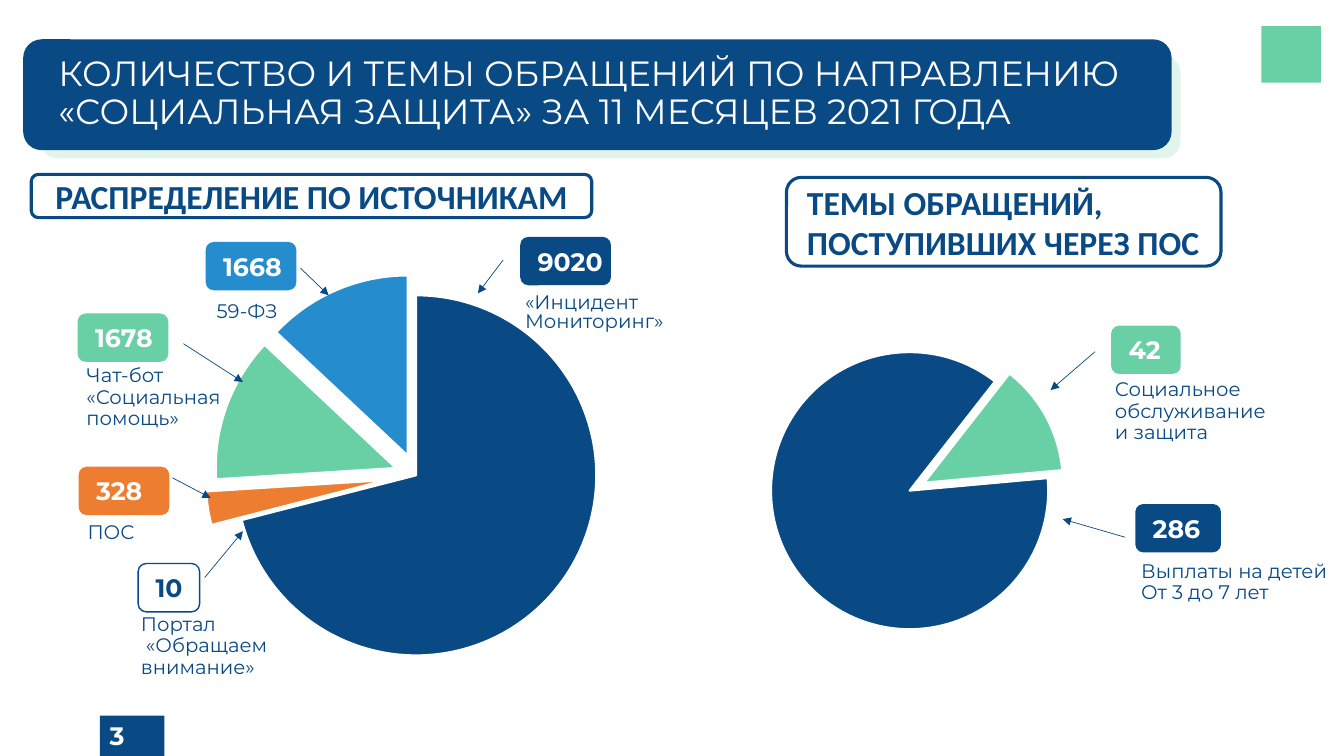
from lxml import etree
from pptx import Presentation
from pptx import util as u
from pptx.chart.data import CategoryChartData
from pptx.dml.color import RGBColor
from pptx.enum import chart as ch, shapes as sh, text as tx
from pptx.oxml import parse_xml
from pptx.oxml.ns import nsdecls, qn

NAVY = RGBColor(0x0A, 0x4A, 0x84)
BLUE = RGBColor(0x25, 0x8D, 0xCD)
GREEN = RGBColor(0x69, 0xD0, 0xA5)
ORANGE = RGBColor(0xED, 0x7D, 0x31)
GREY = RGBColor(0xA5, 0xA5, 0xA5)
WHITE = RGBColor(0xFF, 0xFF, 0xFF)
BLACK = RGBColor(0, 0, 0)

WIDTH, HEIGHT = 13.33, 7.5
BADGE_HEIGHT = 0.48
TITLE = ["КОЛИЧЕСТВО И ТЕМЫ ОБРАЩЕНИЙ ПО НАПРАВЛЕНИЮ",
         "«СОЦИАЛЬНАЯ ЗАЩИТА» ЗА 11 МЕСЯЦЕВ 2021 ГОДА"]
PAGE = "3"
HEADINGS = [
    (["РАСПРЕДЕЛЕНИЕ ПО ИСТОЧНИКАМ"], (0.31, 1.73, 5.56, 0.43), tx.PP_ALIGN.CENTER),
    (["ТЕМЫ ОБРАЩЕНИЙ,", "ПОСТУПИВШИХ ЧЕРЕЗ ПОС"], (7.8, 1.76, 4.31, 0.88), tx.PP_ALIGN.LEFT),
]
PIES = [
    dict(box=(0.76, 1.47, 6.67, 5.27), plot=(0.149, 0.277, 0.712, 0.678), start=0,
         slices=[(71, NAVY, 0), (3, ORANGE, 17), (0, GREY, 0), (13, GREEN, 12), (13, BLUE, 12)]),
    dict(box=(5.61, 3.11, 7.05, 3.37), plot=(0.289, 0.114, 0.39, 0.816), start=38,
         slices=[(13, GREEN, 12), (87, NAVY, 0)]),
]
CALLOUTS = [
    ("9020", (5.16, 2.35, 0.9), NAVY, ["«Инцидент Мониторинг»"],
     (5.11, 2.85, 2.1, 0.51), 0.8, (4.99, 2.58, 4.74, 2.91)),
    ("1668", (2.04, 2.4, 0.9), BLUE, ["59-ФЗ"],
     (2.05, 2.92, 0.9, 0.36), 0.9, (2.98, 2.66, 3.26, 2.93)),
    ("1678", (0.77, 3.11, 0.9), GREEN, ["Чат-бот", "«Социальная", "помощь»"],
     (0.76, 3.49, 2.94, 0.91), 0.9, (1.82, 3.41, 2.41, 3.79)),
    ("328", (0.78, 4.63, 0.9), ORANGE, ["ПОС"],
     (0.77, 5.1, 0.88, 0.38), 0.9, (1.71, 4.74, 2.09, 4.94)),
    ("10", (1.37, 5.59, 0.61), WHITE, ["Портал", "«Обращаем", "внимание»"],
     (1.3, 6.16, 2.66, 0.51), 0.9, (2.03, 5.73, 2.41, 5.27)),
    ("42", (11.02, 3.23, 0.69), GREEN, ["Социальное обслуживание", "и защита"],
     (10.96, 3.69, 1.8, 0.79), 0.9, (10.86, 3.49, 10.42, 3.87)),
    ("286", (11.26, 5, 0.85), NAVY, ["Выплаты на детей", "От 3 до 7 лет"],
     (11.22, 5.4, 2.08, 0.76), 0.9, (11.16, 5.33, 10.54, 5.15)),
]
INDENTED_LINE = "«Обращаем"


def inches(lengths):
    return [u.Inches(length) for length in lengths]


def write(frame, lines, size, font, color, bold=False, spacing=None,
          align=tx.PP_ALIGN.LEFT, left=0.1, right=0.1):
    frame.word_wrap = True
    frame.vertical_anchor = tx.MSO_ANCHOR.MIDDLE
    frame.margin_left, frame.margin_right = inches((left, right))
    for index, line in enumerate(lines):
        paragraph = frame.add_paragraph() if index else frame.paragraphs[0]
        paragraph.alignment = align
        if spacing:
            paragraph.line_spacing = spacing
        if line == INDENTED_LINE:
            paragraph._p.get_or_add_pPr().set("marL", str(u.Inches(0.05)))
        style(paragraph.add_run(), line, size, font, color, bold)


def style(run, words, size, font, color, bold):
    run.text = words
    run.font.size, run.font.name, run.font.bold = u.Pt(size), font, bold
    run.font.color.rgb = color


def panel(box, fill, outline=None, width=1, kind=sh.MSO_SHAPE.ROUNDED_RECTANGLE):
    shape = slide.shapes.add_shape(kind, *inches(box))
    shape.shadow.inherit = False
    shape.fill.solid()
    shape.fill.fore_color.rgb = fill
    if outline is None:
        shape.line.fill.background()
    else:
        shape.line.color.rgb = outline
        shape.line.width = u.Pt(width)
    return shape


def pie(box, plot, start, slices):
    data = CategoryChartData()
    data.categories = [str(number + 1) for number in range(len(slices))]
    data.add_series("Series 1", [value for value, _, _ in slices])
    chart = slide.shapes.add_chart(ch.XL_CHART_TYPE.PIE, *inches(box), data).chart
    chart.has_legend = chart.has_title = False
    chart.font.size, chart.font.name = u.Pt(10), "Calibri"
    chart.font.color.rgb = BLACK
    circle = chart.plots[0]
    circle.vary_by_categories = True
    for index, (_, color, explosion) in enumerate(slices):
        point = circle.series[0].points[index]
        point.format.fill.solid()
        point.format.fill.fore_color.rgb = color
        point.format.line.color.rgb = WHITE
        point.format.line.width = u.Pt(1.5)
        if explosion:
            point_xml = circle.series[0]._element.findall(qn("c:dPt"))[index]
            point_xml.find(qn("c:spPr")).addprevious(
                parse_xml(f'<c:explosion {nsdecls("c")} val="{explosion}"/>'))
    area = chart.element.find(".//" + qn("c:plotArea"))
    for old in area.findall(qn("c:layout")):
        area.remove(old)
    modes = '<c:layoutTarget val="inner"/><c:xMode val="edge"/><c:yMode val="edge"/>'
    sides = "".join(f'<c:{side} val="{share}"/>' for side, share in zip("xywh", plot))
    area.insert(0, parse_xml(f'<c:layout {nsdecls("c")}><c:manualLayout>{modes}{sides}'
                             '</c:manualLayout></c:layout>'))
    pie_xml = area.find(qn("c:pieChart"))
    angle = pie_xml.find(qn("c:firstSliceAng"))
    if angle is None:
        angle = etree.SubElement(pie_xml, qn("c:firstSliceAng"))
    angle.set("val", str(start))


def arrow(ends):
    line = slide.shapes.add_connector(sh.MSO_CONNECTOR.STRAIGHT, *inches(ends))
    line.line.color.rgb = NAVY
    line.line.width = u.Pt(0.5)
    etree.SubElement(line.line._get_or_add_ln(), qn("a:tailEnd"), type="triangle")
    etree.SubElement(line.element.spPr, qn("a:effectLst"))


deck = Presentation()
deck.slide_width, deck.slide_height = inches((WIDTH, HEIGHT))
slide = deck.slides.add_slide(deck.slide_layouts[5])

banner_shade = panel((0.4, 0.55, 11.31, 1.02), GREEN)
shade_color = banner_shade.element.spPr.find(".//" + qn("a:srgbClr"))
etree.SubElement(shade_color, qn("a:alpha"), val="20000")
panel((0.23, 0.39, 11.39, 1.1), NAVY)

title = slide.shapes.title
title.left, title.top, title.width, title.height = inches((0.48, 0.21, 11.63, 1.45))
write(title.text_frame, TITLE[:1], 25, "Montserrat", WHITE, spacing=0.9)
heading = title.text_frame.paragraphs[0]
heading.add_line_break()
style(heading.add_run(), TITLE[1], 25, "Montserrat", WHITE, False)
slide.shapes.element.append(title.element)

for lines, box, align in HEADINGS:
    write(panel(box, WHITE, NAVY, 2.25).text_frame, lines, 24, "Calibri", NAVY, True,
          align=align, left=0.16 if align == tx.PP_ALIGN.LEFT else 0.1)

for settings in PIES:
    pie(**settings)

for number, (left, top, width), color, lines, label_box, spacing, ends in CALLOUTS:
    hollow = color == WHITE
    badge = panel((left, top, width, BADGE_HEIGHT), color, NAVY if hollow else None)
    write(badge.text_frame, [number], 18, "Montserrat", NAVY if hollow else WHITE, True,
          left=0.15, right=0)
    label = slide.shapes.add_textbox(*inches(label_box))
    write(label.text_frame, lines, 14, "Montserrat", NAVY, spacing=spacing, right=0)
    arrow(ends)

page_tab = panel((0.99, 7.1, 0.64, 0.4), NAVY, kind=sh.MSO_SHAPE.RECTANGLE)
write(page_tab.text_frame, [PAGE], 18, "Montserrat", WHITE, True)
panel((12.51, 0.26, 0.59, 0.56), GREEN, kind=sh.MSO_SHAPE.RECTANGLE)

deck.save("out.pptx")
